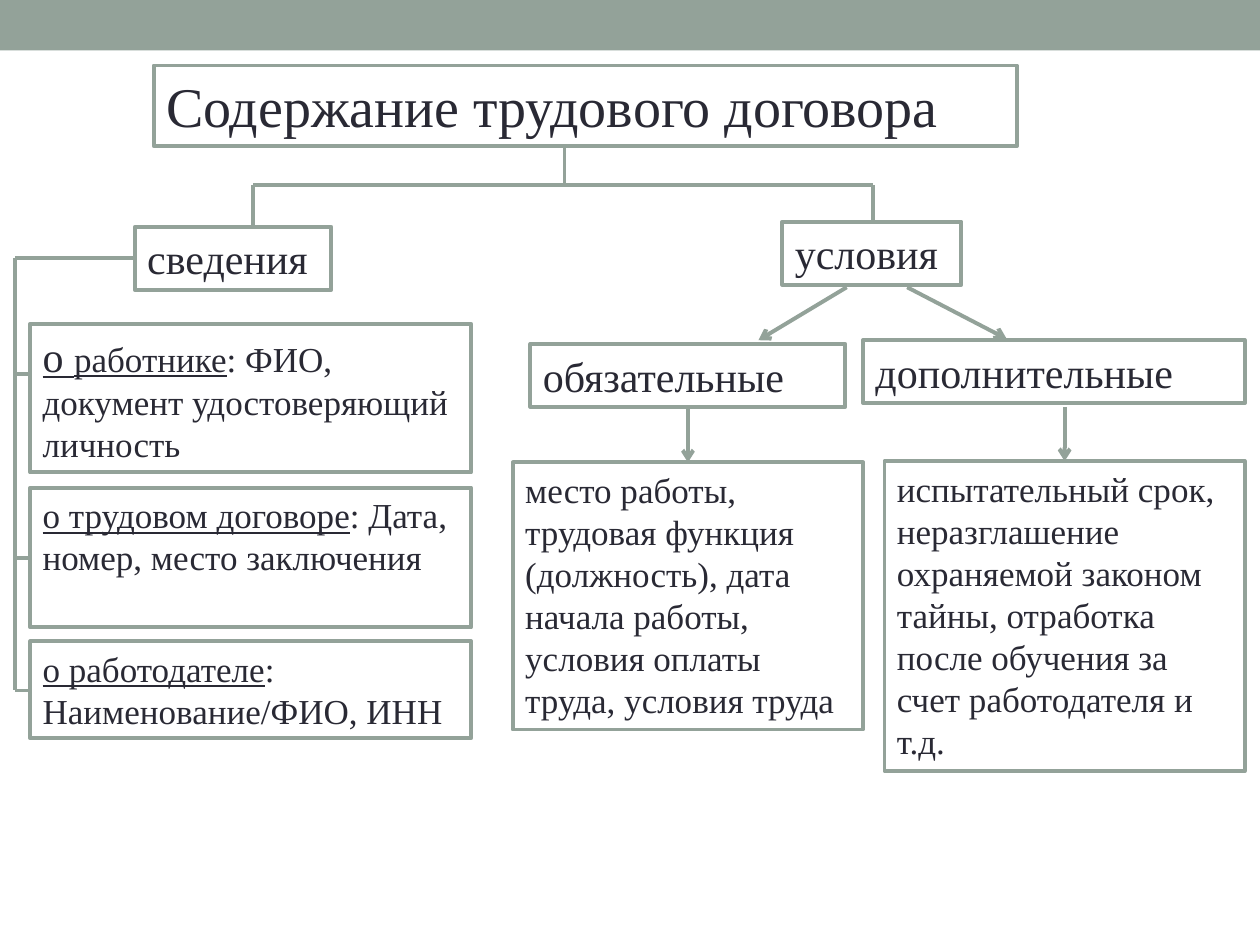
from dataclasses import dataclass

from lxml.etree import SubElement
from pptx import Presentation
from pptx.dml.color import RGBColor
from pptx.enum.shapes import MSO_CONNECTOR as Connector, MSO_SHAPE as Shape
from pptx.enum.text import MSO_ANCHOR as Anchor, MSO_AUTO_SIZE as AutoSize
from pptx.oxml.ns import qn
from pptx.util import Inches, Pt


@dataclass(frozen=True)
class Theme:
    green: RGBColor = RGBColor(0x93, 0xA2, 0x99)
    ink: RGBColor = RGBColor(0x29, 0x29, 0x34)
    font: str = "Times New Roman"
    title: int = 32
    heading: int = 24
    body: int = 20
    border: float = 2.25
    branch: float = 2


theme = Theme()
deck = Presentation()
deck.slide_width, deck.slide_height = Inches(10), Inches(7.5)
page = deck.slides.add_slide(deck.slide_layouts[6])


def add_box(left, top, width, height, *spans):
    """Add an outlined box; each span is (text, size, underlined)."""
    box = page.shapes.add_textbox(*map(Inches, (left, top, width, height)))
    box.line.color.rgb = theme.green
    box.line.width = Pt(theme.border)
    frame = box.text_frame
    frame.word_wrap = True
    frame.auto_size = AutoSize.NONE
    frame.vertical_anchor = Anchor.TOP
    para = frame.paragraphs[0]
    for text, size, underlined in spans:
        span = para.add_run()
        span.text = text
        span.font.name = theme.font
        span.font.size = Pt(size)
        span.font.color.rgb = theme.ink
        span.font.underline = underlined


def add_line(start_x, start_y, end_x, end_y, width, arrow=False):
    ends = map(Inches, (start_x, start_y, end_x, end_y))
    line = page.shapes.add_connector(Connector.STRAIGHT, *ends)
    line.line.color.rgb = theme.green
    line.line.width = Pt(width)
    if arrow:
        SubElement(line.line._get_or_add_ln(), qn("a:tailEnd"), type="arrow")
    SubElement(line._element.spPr, qn("a:effectLst"))


# Top band
band = page.shapes.add_shape(Shape.RECTANGLE, 0, 0, deck.slide_width, Inches(0.4))
band.shadow.inherit = False
band.fill.solid()
band.fill.fore_color.rgb = theme.green
band.line.fill.background()

# Title and headings
add_box(1.22, 0.52, 6.85, 0.64, ("Содержание трудового договора", theme.title, False))
for left, top, width, text in (
    (1.07, 1.8, 1.56, "сведения"),
    (6.21, 1.76, 1.42, "условия"),
    (4.21, 2.73, 2.5, "обязательные"),
    (6.85, 2.7, 3.03, "дополнительные"),
):
    add_box(left, top, width, 0.5, (text, theme.heading, False))

# Information boxes
info_left, info_width = 0.24, 3.5
add_box(info_left, 2.57, info_width, 1.18,
        ("о ", theme.heading, True),
        ("работнике", theme.body, True),
        (": ФИО, документ удостоверяющий личность", theme.body, False))
for top, height, topic, details in (
    (3.87, 1.11, "о трудовом договоре", ": Дата, номер, место заключения"),
    (5.09, 0.77, "о работодателе", ": Наименование/ФИО, ИНН"),
):
    add_box(info_left, top, info_width, height,
            (topic, theme.body, True), (details, theme.body, False))

# Condition boxes
for left, top, width, height, text in (
    (4.07, 3.67, 2.78, 2.12,
     "место работы, трудовая функция (должность), дата начала работы, "
     "условия оплаты труда, условия труда"),
    (7.02, 3.66, 2.86, 2.46,
     "испытательный срок, неразглашение охраняемой законом тайны, "
     "отработка после обучения за счет работодателя и т.д."),
):
    add_box(left, top, width, height, (text, theme.body, False))

# Arrows between the condition boxes
for ends in (
    (6.72, 2.28, 6.02, 2.7),
    (7.2, 2.28, 7.99, 2.69),
    (5.46, 3.23, 5.46, 3.67),
    (8.45, 3.23, 8.45, 3.66),
):
    add_line(*ends, theme.border, arrow=True)

# Branches from the title to the two headings
fork_y, info_x, terms_x = 1.47, 2.01, 6.93
add_line(4.48, 1.16, 4.48, fork_y, theme.branch)
add_line(info_x, fork_y, terms_x, fork_y, theme.branch)
add_line(info_x, fork_y, info_x, 1.8, theme.branch)
add_line(terms_x, fork_y, terms_x, 1.76, theme.branch)

# Bracket from the information heading to its boxes
trunk_x, trunk_top, rungs = 0.12, 2.05, (2.97, 4.43, 5.48)
add_line(trunk_x, trunk_top, 1.06, trunk_top, theme.branch)
add_line(trunk_x, trunk_top, trunk_x, rungs[-1], theme.branch)
for rung_y in rungs:
    add_line(trunk_x, rung_y, info_left, rung_y, theme.branch)

deck.save("out.pptx")
